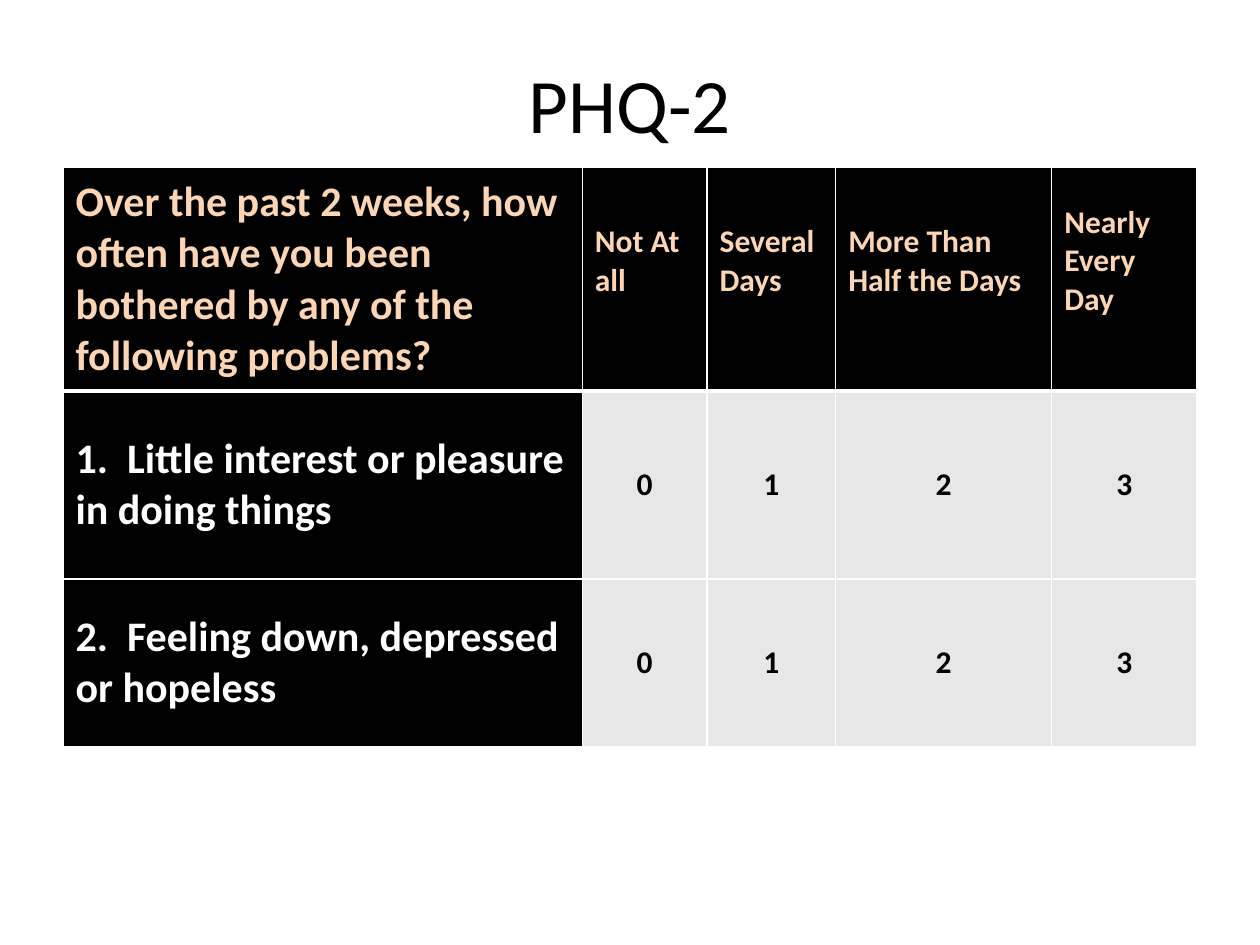
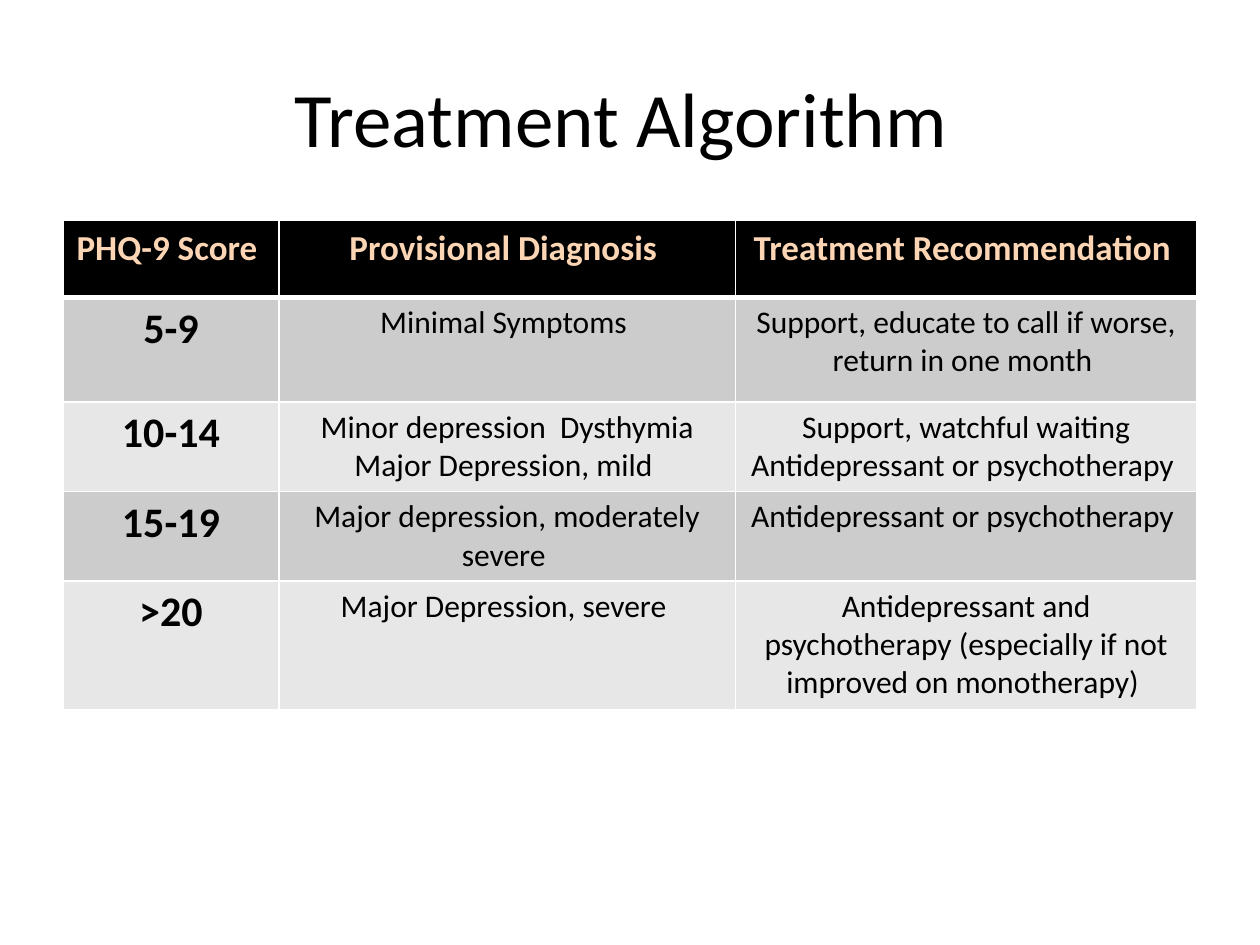
from lxml import etree
from pptx import Presentation
from pptx import util as u
from pptx.dml.color import RGBColor
from pptx.enum import text
from pptx.oxml import ns

BLACK = RGBColor(0x00, 0x00, 0x00)
WHITE = RGBColor(0xFF, 0xFF, 0xFF)
PEACH = RGBColor(0xFC, 0xD5, 0xB5)
LIGHT = RGBColor(0xE7, 0xE7, 0xE7)
GREY = RGBColor(0xCC, 0xCC, 0xCC)

FONT = "Calibri"
WIDTH, HEIGHT = u.Inches(10), u.Inches(7.5)
MARGIN = 5
CONTENT = 100 - 2 * MARGIN
CENTER = text.PP_ALIGN.CENTER
LEFT = text.PP_ALIGN.LEFT
MIDDLE = text.MSO_ANCHOR.MIDDLE
TOP = text.MSO_ANCHOR.TOP

QUESTIONS = [
    ["Over the past 2 weeks, how often have you been bothered by any of the following problems?",
     "Not At all", "Several Days", "More Than Half the Days", "Nearly Every Day"],
    ["1.  Little interest or pleasure in doing things", "0", "1", "2", "3"],
    ["2.  Feeling down, depressed or hopeless", "0", "1", "2", "3"],
]
TREATMENTS = [
    ["PHQ-9 Score ", "Provisional Diagnosis ", "Treatment Recommendation "],
    ["5-9", "Minimal Symptoms ", "Support, educate to call if worse, return in one month "],
    ["10-14", "Minor depression  Dysthymia Major Depression, mild ",
     "Support, watchful waiting Antidepressant or psychotherapy "],
    ["15-19", "Major depression, moderately severe ", "Antidepressant or psychotherapy "],
    [">20", "Major Depression, severe ",
     "Antidepressant and psychotherapy (especially if not improved on monotherapy) "],
]


def across(percent):
    return round(WIDTH * percent / 100)


def down(percent):
    return round(HEIGHT * percent / 100)


def write(paragraph, words, size, color, bold=False, align=CENTER):
    paragraph.alignment = align
    span = paragraph.add_run()
    span.text = words
    span.font.name = FONT
    span.font.size = u.Pt(size)
    span.font.bold = bold
    span.font.color.rgb = color


def add_title(page, words, height):
    box = page.shapes.add_textbox(across(MARGIN), down(4), across(CONTENT), down(height))
    box.text_frame.word_wrap = True
    box.text_frame.vertical_anchor = MIDDLE
    write(box.text_frame.paragraphs[0], words, 44, BLACK)


def add_borders(cell, row):
    properties = cell._tc.get_or_add_tcPr()
    widths = {"L": 1, "R": 1, "T": 3 if row == 1 else 1, "B": 3 if row == 0 else 1}
    for side, width in widths.items():
        line = etree.SubElement(properties, ns.qn(f"a:ln{side}"), w=str(u.Pt(width)))
        fill = etree.SubElement(line, ns.qn("a:solidFill"))
        etree.SubElement(fill, ns.qn("a:srgbClr"), val=str(WHITE))


def add_grid(page, content, top, columns, rows, style_cell):
    frame = page.shapes.add_table(len(rows), len(columns), across(MARGIN), down(top),
                                  across(CONTENT), down(sum(rows)))
    table = frame.table
    for column, share in zip(table.columns, columns):
        column.width = across(CONTENT * share / 100)
    for row, share in zip(table.rows, rows):
        row.height = down(share)
    for r, line in enumerate(content):
        for c, words in enumerate(line):
            cell = table.cell(r, c)
            add_borders(cell, r)
            cell.fill.solid()
            style_cell(cell, words, r, c)


def style_question(cell, words, row, column):
    header, label = row == 0, column == 0
    cell.vertical_anchor = MIDDLE
    cell.fill.fore_color.rgb = BLACK if header or label else LIGHT
    if header and not label:
        cell.margin_bottom = u.Inches(0.34)
    color = PEACH if header else WHITE if label else BLACK
    write(cell.text_frame.paragraphs[0], words, 24 if label else 18, color, True,
          LEFT if header or label else CENTER)


def style_treatment(cell, words, row, column):
    paragraph = cell.text_frame.paragraphs[0]
    cell.vertical_anchor = TOP
    if row == 0:
        cell.fill.fore_color.rgb = BLACK
        cell.margin_left = cell.margin_right = u.Inches(0.07)
        cell.margin_top = cell.margin_bottom = 0
        paragraph.line_spacing = 1.15
        paragraph.space_after = u.Pt(10)
        write(paragraph, words, 20, PEACH, True)
    else:
        cell.fill.fore_color.rgb = GREY if row % 2 else LIGHT
        score = column == 0
        write(paragraph, words, 24 if score else 18, BLACK, score)


def add_page(deck, title, title_height):
    page = deck.slides.add_slide(deck.slide_layouts[6])
    add_title(page, title, title_height)
    return page


def main():
    deck = Presentation()
    deck.slide_width, deck.slide_height = WIDTH, HEIGHT

    screening = add_page(deck, "PHQ-2", 13.73)
    add_grid(screening, QUESTIONS, 17.73, [45.8, 11, 11.35, 19.05, 12.8],
             [23.65, 19.87, 17.73], style_question)

    algorithm = add_page(deck, "Treatment Algorithm ", 16.67)
    add_grid(algorithm, TREATMENTS, 23.33, [19.05, 40.25, 40.7],
             [8.13, 11.07, 9.47, 9.47, 13.6], style_treatment)

    deck.save("out.pptx")


if __name__ == "__main__":
    main()
